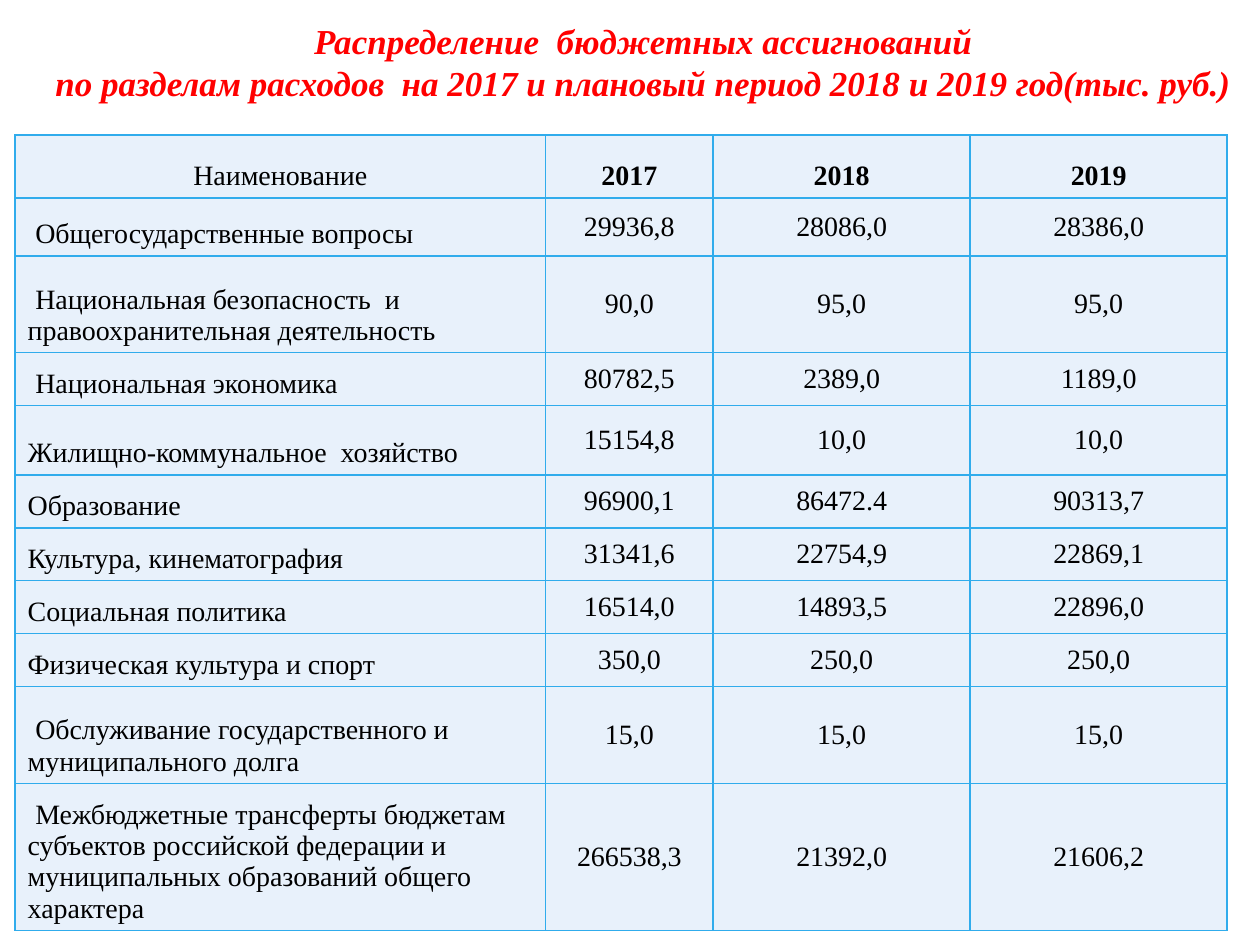
from lxml.etree import SubElement
from pptx import Presentation
from pptx.dml.color import RGBColor
from pptx.enum.text import MSO_ANCHOR, PP_ALIGN
from pptx.oxml.ns import qn
from pptx.util import Inches, Pt

RED = RGBColor(0xFF, 0x00, 0x00)
BLACK = RGBColor(0x00, 0x00, 0x00)
PALE_BLUE = RGBColor(0xE8, 0xF1, 0xFB)
BORDER_BLUE = RGBColor(0x30, 0xAC, 0xEC)
FONT_NAME = "Times New Roman"

TITLE_LINES = (
    "Распределение  бюджетных ассигнований",
    "по разделам расходов  на 2017 и плановый период 2018 и 2019 год(тыс. руб.)",
)
HEADER = ("Наименование", "2017", "2018", "2019")
# Row height, first-line indent, section name, amounts for the three years
BUDGET_SECTIONS = (
    (0.46, 0.06, "Общегосударственные вопросы", "29936,8", "28086,0", "28386,0"),
    (0.77, 0.06, "Национальная безопасность  и правоохранительная деятельность",
     "90,0", "95,0", "95,0"),
    (0.42, 0.06, "Национальная экономика", "80782,5", "2389,0", "1189,0"),
    (0.55, 0, "Жилищно-коммунальное  хозяйство", "15154,8", "10,0", "10,0"),
    (0.42, 0, "Образование", "96900,1", "86472.4", "90313,7"),
    (0.42, 0, "Культура, кинематография", "31341,6", "22754,9", "22869,1"),
    (0.42, 0, "Социальная политика", "16514,0", "14893,5", "22896,0"),
    (0.42, 0, "Физическая культура и спорт", "350,0", "250,0", "250,0"),
    (0.77, 0.06, "Обслуживание государственного и муниципального долга",
     "15,0", "15,0", "15,0"),
    (1.16, 0.06, "Межбюджетные трансферты бюджетам субъектов российской федерации "
     "и муниципальных образований общего характера",
     "266538,3", "21392,0", "21606,2"),
)
HEADER_HEIGHT = 0.5
COLUMN_WIDTHS = (4.21, 1.33, 2.04, 2.04)


def format_paragraph(paragraph, size, color, alignment, bold=False, italic=False):
    paragraph.alignment = alignment
    for run in paragraph.runs:
        font = run.font
        font.name = FONT_NAME
        font.size = Pt(size)
        font.bold = bold
        font.italic = italic
        font.color.rgb = color


def add_title(slide):
    box = slide.shapes.add_textbox(Inches(0.28), Inches(0.13), Inches(9.65), Inches(0.71))
    text_frame = box.text_frame
    text_frame.word_wrap = True
    text_frame.vertical_anchor = MSO_ANCHOR.MIDDLE
    text_frame.text = "\v".join(TITLE_LINES)
    format_paragraph(text_frame.paragraphs[0], 20, RED, PP_ALIGN.CENTER,
                     bold=True, italic=True)


def add_borders(cell):
    """Draw a 1 pt line on each side; call before the fill is set."""
    properties = cell._tc.get_or_add_tcPr()
    for side in ("a:lnL", "a:lnR", "a:lnT", "a:lnB"):
        line = SubElement(properties, qn(side), w=str(Pt(1)))
        fill = SubElement(line, qn("a:solidFill"))
        SubElement(fill, qn("a:srgbClr"), val=str(BORDER_BLUE))


def fill_cell(cell, text, anchor, alignment, bold=False, indent=0):
    add_borders(cell)
    cell.fill.solid()
    cell.fill.fore_color.rgb = PALE_BLUE
    cell.vertical_anchor = anchor
    cell.text = text
    paragraph = cell.text_frame.paragraphs[0]
    format_paragraph(paragraph, 16, BLACK, alignment, bold)
    if indent:
        paragraph._p.get_or_add_pPr().set("indent", str(Inches(indent)))


def add_budget_table(slide):
    heights = [HEADER_HEIGHT] + [section[0] for section in BUDGET_SECTIONS]
    frame = slide.shapes.add_table(
        len(heights), len(COLUMN_WIDTHS), Inches(0.12), Inches(1.07),
        Inches(sum(COLUMN_WIDTHS)), Inches(sum(heights)))
    table = frame.table
    for column, width in zip(table.columns, COLUMN_WIDTHS):
        column.width = Inches(width)
    for row, height in zip(table.rows, heights):
        row.height = Inches(height)

    for column_index, label in enumerate(HEADER):
        fill_cell(table.cell(0, column_index), label, MSO_ANCHOR.BOTTOM,
                  PP_ALIGN.CENTER, bold=column_index > 0)
    for row_index, (_, indent, name, *amounts) in enumerate(BUDGET_SECTIONS, start=1):
        fill_cell(table.cell(row_index, 0), name, MSO_ANCHOR.BOTTOM,
                  PP_ALIGN.LEFT, indent=indent)
        for column_index, amount in enumerate(amounts, start=1):
            fill_cell(table.cell(row_index, column_index), amount,
                      MSO_ANCHOR.MIDDLE, PP_ALIGN.CENTER)


def main():
    presentation = Presentation()
    presentation.slide_width = Inches(10)
    presentation.slide_height = Inches(7.5)
    slide = presentation.slides.add_slide(presentation.slide_layouts[6])
    add_title(slide)
    add_budget_table(slide)
    presentation.save("out.pptx")


if __name__ == "__main__":
    main()
